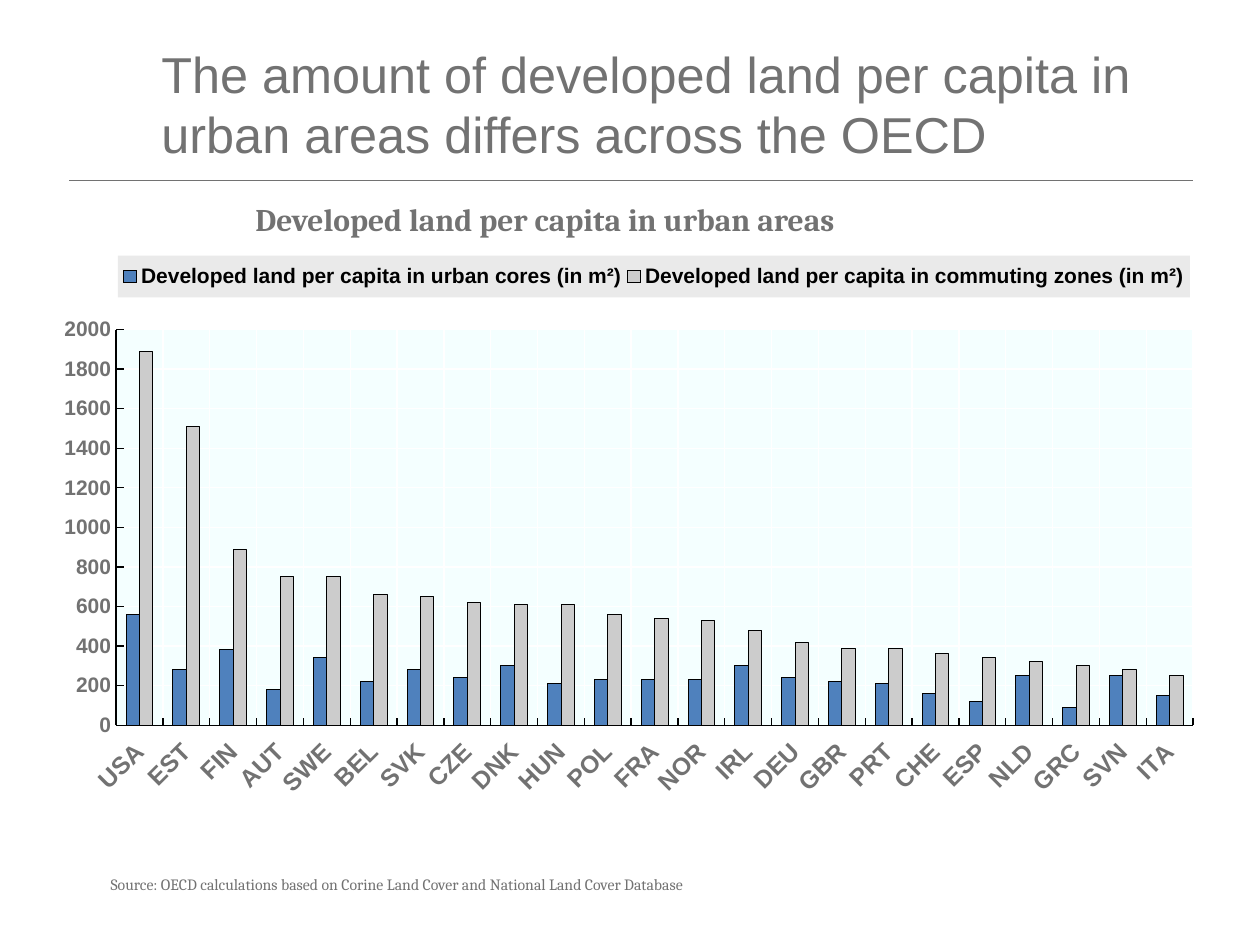
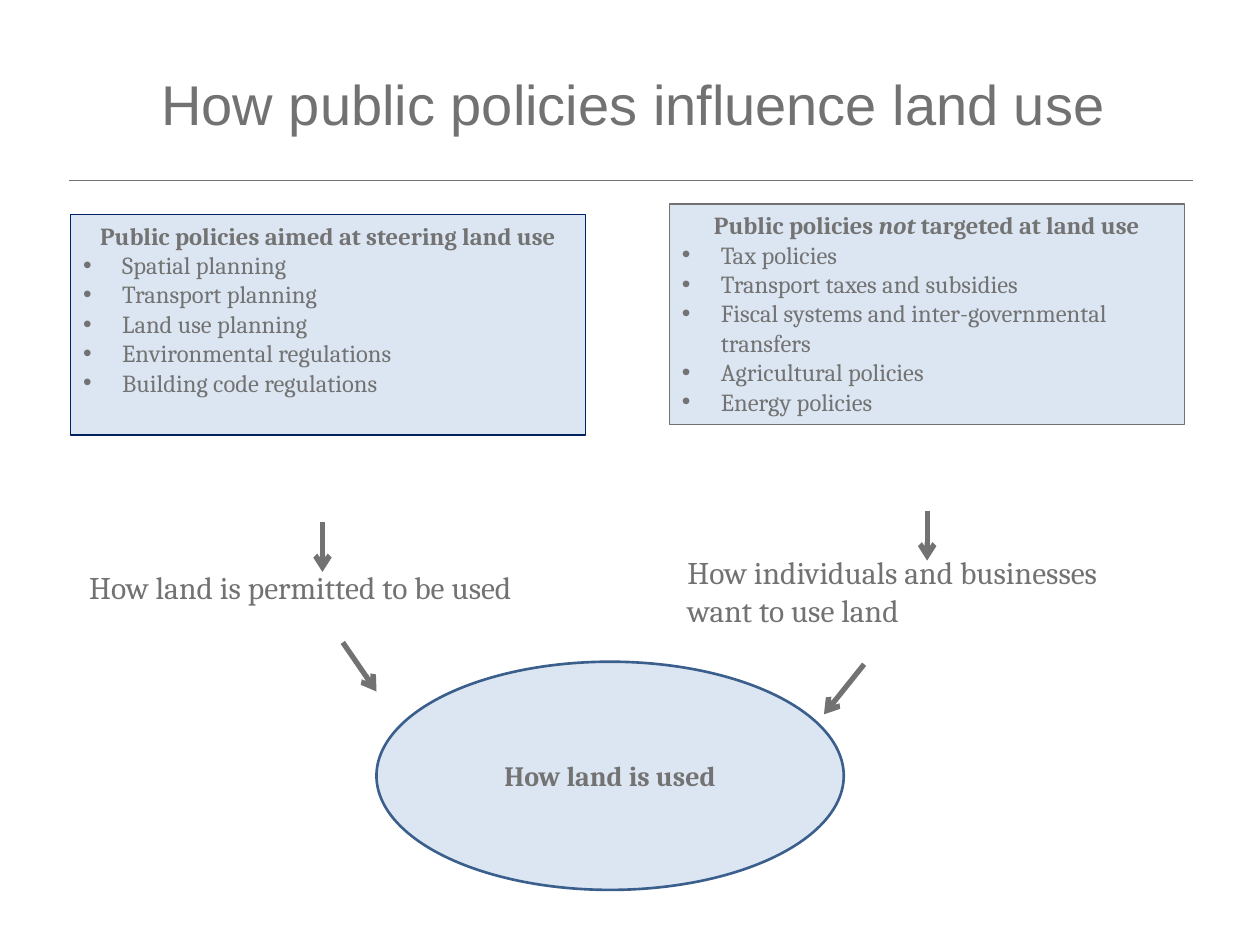
from lxml import etree
from pptx import Presentation, util as u
from pptx.chart.data import CategoryChartData
from pptx.dml.color import RGBColor
from pptx.enum import chart as ch, shapes, text
from pptx.oxml import parse_xml
from pptx.oxml.ns import nsdecls, qn

# Shared style
GREY, DARK_GREY, BLACK, WHITE = "727272", "737373", "000000", "FFFFFF"
PALE_BLUE, NAVY, STEEL = "DCE6F2", "002060", "3A5F8C"
PLOT_FILL, LEGEND_FILL = "F4FFFF", "EAEAEA"
TITLE_FONT, BODY_FONT = "Arial", "Cambria"
TITLE_AREA = (3.0, 0.66, 20.6, 2.84)
RULE = (1.4, 3.63, 24.05, 3.63)

# Slide 1 content: country, urban cores, commuting zones
LAND_TITLE = "The amount of developed land per capita in urban areas differs across the OECD"
CHART_AREA = (1.09, 4.93, 23.01, 11.2)
PLOT_LAYOUT = (0.009, 0.133, 0.989, 0.862)
LEGEND_LAYOUT = (0.056, 0.02, 0.939, 0.075)
SERIES = [("Developed land per capita in urban cores (in m²)", "4F81BD"),
          ("Developed land per capita in commuting zones (in m²)", "CCCCCC")]
LAND = [
    ("USA", 560, 1890), ("EST", 280, 1510), ("FIN", 380, 890), ("AUT", 180, 750),
    ("SWE", 340, 750), ("BEL", 220, 660), ("SVK", 280, 650), ("CZE", 240, 620),
    ("DNK", 300, 610), ("HUN", 210, 610), ("POL", 230, 560), ("FRA", 230, 540),
    ("NOR", 230, 530), ("IRL", 300, 480), ("DEU", 240, 420), ("GBR", 220, 390),
    ("PRT", 210, 390), ("CHE", 160, 360), ("ESP", 120, 340), ("NLD", 250, 320),
    ("GRC", 90, 300), ("SVN", 250, 280), ("ITA", 150, 250),
]
# (area, lines, size, bold)
LAND_NOTES = [
    ((4.9, 3.91, 14.05, 1.02), ["Developed land per capita in urban areas"], 18, True),
    ((1.98, 17.5, 12.7, 1.02),
     ["Source: OECD calculations based on Corine Land Cover and National Land Cover Database"],
     9, False),
]

# Slide 2 content: (area, outline, heading runs with italic flag, bullets)
POLICY_TITLE = "How public policies influence land use"
POLICIES = [
    ((1.42, 4.32, 10.39, 4.45), NAVY,
     [("Public policies aimed at steering land use", False)],
     ["Spatial planning", "Transport planning", "Land use planning",
      "Environmental regulations", "Building code regulations"]),
    ((13.49, 4.11, 10.39, 4.45), GREY,
     [("Public policies ", False), ("not ", True), ("targeted at land use", False)],
     ["Tax policies", "Transport taxes and subsidies",
      "Fiscal systems and inter-governmental transfers",
      "Agricultural policies", "Energy policies"]),
]
EFFECTS = [
    ((1.55, 11.33, 11.0, 1.02), ["How land is permitted to be used"], 18, False),
    ((13.61, 11.02, 9.55, 1.8), ["How individuals and businesses", "want to use land"], 18, False),
]
OUTCOME = ((7.59, 13.34, 9.42, 4.6), "How land is used")
ARROWS = [(6.5, 10.52, 6.5, 11.53), (18.69, 10.31, 18.69, 11.3),
          (6.91, 12.95, 7.59, 13.94), (17.42, 13.39, 16.61, 14.4)]


def color(value):
    return RGBColor.from_string(value)


def cm(values):
    return [u.Cm(value) for value in values]


def style_font(font, size, value, name=BODY_FONT, bold=False):
    font.size, font.name, font.bold = u.Pt(size), name, bold
    font.color.rgb = color(value)


def style_runs(para, size, value, name=BODY_FONT, bold=False):
    for span in para.runs:
        style_font(span.font, size, value, name, bold)


def set_line(line, value, width):
    line.color.rgb = color(value)
    line.width = u.Pt(width)


def set_fill(shape, value):
    shape.fill.solid()
    shape.fill.fore_color.rgb = color(value)


def place(shape, area):
    shape.left, shape.top, shape.width, shape.height = cm(area)


def add_line(page, ends, width, arrow=False):
    line = page.shapes.add_connector(shapes.MSO_CONNECTOR.STRAIGHT, *cm(ends))
    set_line(line.line, GREY, width)
    if arrow:
        etree.SubElement(line.line._get_or_add_ln(), qn("a:tailEnd"), type="arrow")
    etree.SubElement(line._element.spPr, qn("a:effectLst"))


def add_page(deck, layout, title, size):
    page = deck.slides.add_slide(deck.slide_layouts[layout])
    box = page.shapes.title
    place(box, TITLE_AREA)
    frame = box.text_frame
    frame.text = title
    frame.auto_size = text.MSO_AUTO_SIZE.NONE
    frame.vertical_anchor = text.MSO_ANCHOR.MIDDLE
    frame.paragraphs[0].alignment = text.PP_ALIGN.LEFT
    style_runs(frame.paragraphs[0], size, GREY, TITLE_FONT)
    add_line(page, RULE, 0.5)
    return page


def add_label(page, area, lines, size, bold):
    frame = page.shapes.add_textbox(*cm(area)).text_frame
    frame.word_wrap = True
    frame.text = "\n".join(lines)
    for para in frame.paragraphs:
        style_runs(para, size, GREY, bold=bold)


def set_bullet(para, mark):
    props = para._p.get_or_add_pPr()
    indent = u.Cm(0.79) if mark else 0
    props.set("marL", str(indent))
    props.set("indent", str(-indent))
    if mark:
        etree.SubElement(props, qn("a:buFont"), typeface="Arial")
        etree.SubElement(props, qn("a:buChar"), char=mark)
    else:
        etree.SubElement(props, qn("a:buNone"))


def fill_policy_box(box, area, outline, heading, bullets):
    place(box, area)
    set_fill(box, PALE_BLUE)
    set_line(box.line, outline, 0.75)
    frame = box.text_frame
    frame.auto_size = text.MSO_AUTO_SIZE.NONE
    frame.vertical_anchor = text.MSO_ANCHOR.TOP
    frame.text = "\n".join([""] + bullets)
    for number, para in enumerate(frame.paragraphs):
        set_bullet(para, "•" if number else None)
        para.space_before = u.Pt(0)
        para.alignment = text.PP_ALIGN.LEFT
        style_runs(para, 14, DARK_GREY)
    first = frame.paragraphs[0]
    first.alignment = text.PP_ALIGN.CENTER
    for words, italic in heading:
        span = first.add_run()
        span.text = words
        span.font.italic = italic
    style_runs(first, 14, DARK_GREY, bold=True)


def manual_layout(area, target=""):
    modes = "".join(f'<c:{side}Mode val="edge"/>' for side in "xy")
    sizes = "".join(f'<c:{key} val="{value}"/>' for key, value in zip("xywh", area))
    return parse_xml(f'<c:layout {nsdecls("c")}><c:manualLayout>{target}{modes}{sizes}'
                     "</c:manualLayout></c:layout>")


def fill_xml(value):
    return parse_xml(f'<c:spPr {nsdecls("c", "a")}><a:solidFill><a:srgbClr val="{value}"/>'
                     "</a:solidFill></c:spPr>")


def add_land_chart(page):
    data = CategoryChartData()
    data.categories = [row[0] for row in LAND]
    for column, (name, _) in enumerate(SERIES, 1):
        data.add_series(name, [row[column] for row in LAND])
    chart = page.shapes.add_chart(ch.XL_CHART_TYPE.COLUMN_CLUSTERED, *cm(CHART_AREA), data).chart
    style_font(chart.font, 12, GREY, TITLE_FONT, True)
    chart.has_title = False

    # Columns
    plot = chart.plots[0]
    plot.gap_width, plot.overlap, plot.vary_by_categories = 150, 0, False
    for series, (_, value) in zip(plot.series, SERIES):
        set_fill(series.format, value)
        set_line(series.format.line, BLACK, 0.5)

    # Axes
    for axis, size in ((chart.category_axis, 14), (chart.value_axis, 12)):
        axis.major_tick_mark = ch.XL_TICK_MARK.INSIDE
        axis.minor_tick_mark = ch.XL_TICK_MARK.NONE
        axis.has_major_gridlines = True
        set_line(axis.major_gridlines.format.line, WHITE, 0.75)
        set_line(axis.format.line, BLACK, 0.75)
        style_font(axis.tick_labels.font, size, GREY, TITLE_FONT, True)
    names, values = chart.category_axis, chart.value_axis
    names.tick_label_position = ch.XL_TICK_LABEL_POSITION.LOW
    names._element.find(qn("c:txPr")).find(qn("a:bodyPr")).set("rot", "-2700000")
    values.minimum_scale, values.maximum_scale, values.major_unit = 0, 2000, 200

    # Plot background and position
    area = chart._chartSpace.chart.plotArea
    for old in area.findall(qn("c:layout")):
        area.remove(old)
    area.insert(0, manual_layout(PLOT_LAYOUT, '<c:layoutTarget val="outer"/>'))
    area.append(fill_xml(PLOT_FILL))

    # Legend
    chart.has_legend = True
    legend = chart.legend
    legend.position = ch.XL_LEGEND_POSITION.RIGHT
    legend.include_in_layout = True
    style_font(legend.font, 12, BLACK, TITLE_FONT, True)
    for old in legend._element.findall(qn("c:layout")):
        legend._element.remove(old)
    overlay = legend._element.find(qn("c:overlay"))
    overlay.addprevious(manual_layout(LEGEND_LAYOUT))
    overlay.addnext(fill_xml(LEGEND_FILL))


def add_outcome(page, area, words):
    oval = page.shapes.add_shape(shapes.MSO_SHAPE.OVAL, *cm(area))
    oval.shadow.inherit = False
    set_fill(oval, PALE_BLUE)
    set_line(oval.line, STEEL, 1.5)
    frame = oval.text_frame
    frame.text = words
    frame.vertical_anchor = text.MSO_ANCHOR.MIDDLE
    frame.paragraphs[0].alignment = text.PP_ALIGN.CENTER
    style_runs(frame.paragraphs[0], 16, DARK_GREY, bold=True)


def main():
    deck = Presentation()
    deck.slide_width, deck.slide_height = cm((25.4, 19.05))

    # Developed land chart
    page = add_page(deck, 5, LAND_TITLE, 28.8)
    add_land_chart(page)
    for note in LAND_NOTES:
        add_label(page, *note)

    # Policy diagram
    page = add_page(deck, 3, POLICY_TITLE, 32)
    for index, policy in enumerate(POLICIES, 1):
        fill_policy_box(page.placeholders[index], *policy)
    for effect in EFFECTS:
        add_label(page, *effect)
    add_outcome(page, *OUTCOME)
    for ends in ARROWS:
        add_line(page, ends, 3, arrow=True)

    deck.save("out.pptx")


if __name__ == "__main__":
    main()
